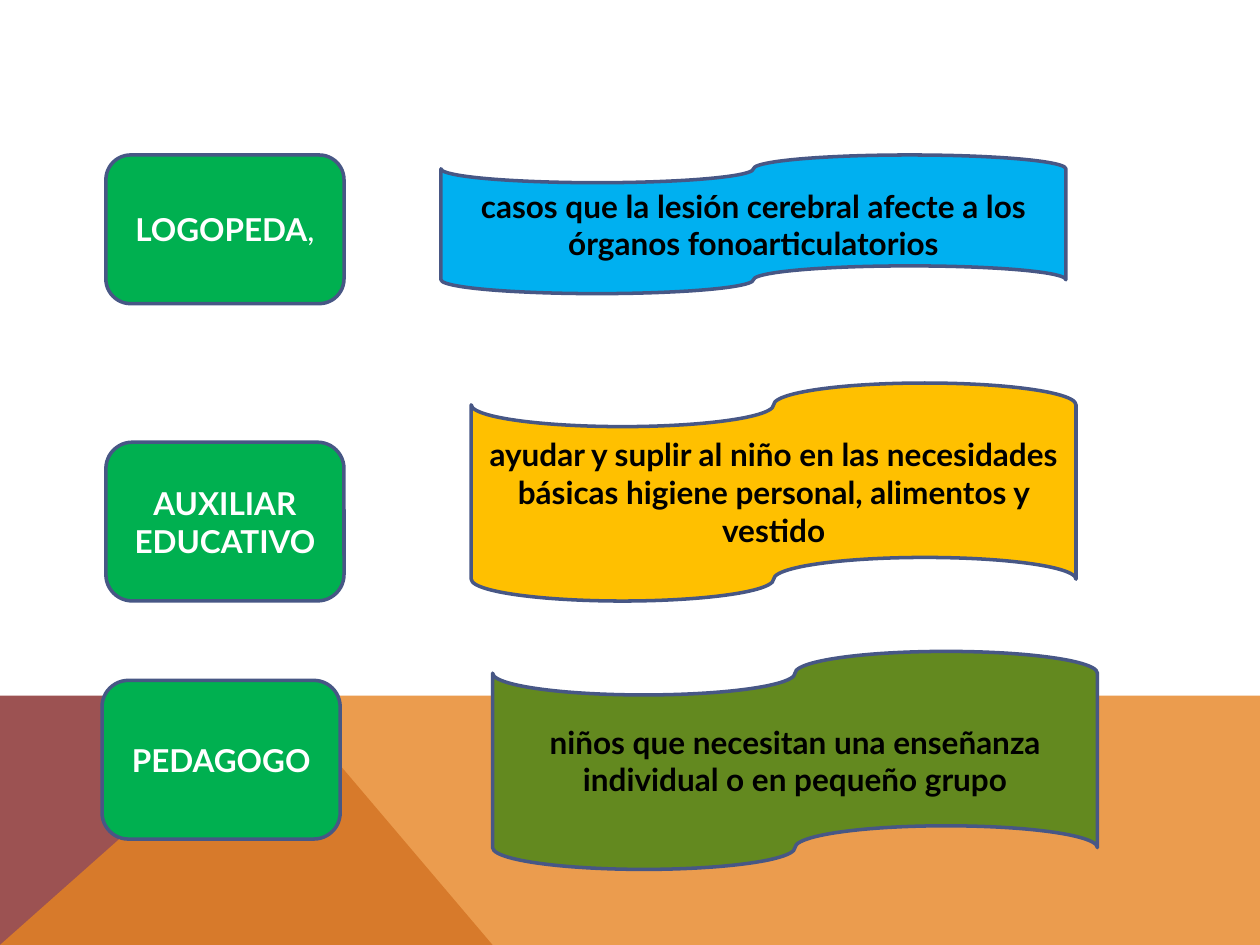
from dataclasses import dataclass

from lxml.etree import SubElement
from pptx import Presentation
from pptx.dml.color import RGBColor
from pptx.enum.shapes import MSO_SHAPE
from pptx.enum.text import MSO_ANCHOR, PP_ALIGN
from pptx.oxml.ns import qn
from pptx.util import Inches, Pt

WIDTH, HEIGHT = Inches(10), Inches(7.5)
FONT = "Lato"
COLORS = {
    "maroon": "9C5252",
    "orange": "E68422",
    "green": "00B050",
    "blue": "00B0F0",
    "amber": "FFC000",
    "olive": "63891F",
    "outline": "475785",
    "white": "FFFFFF",
    "black": "000000",
}
ROLE_WIDTH = 18.9


# All lengths are percentages of the slide's width or height.
@dataclass(frozen=True)
class Box:
    left: float
    top: float
    width: float
    height: float


@dataclass(frozen=True)
class Card:
    box: Box
    text: str
    fill: str
    plain_tail: str = ""


ROLES = [
    Card(Box(8.4, 16.4, ROLE_WIDTH, 15.73), "LOGOPEDA", "green", ","),
    Card(Box(8.4, 46.8, ROLE_WIDTH, 16.8), "AUXILIAR EDUCATIVO", "green"),
    Card(Box(8.1, 72, ROLE_WIDTH, 16.8), "PEDAGOGO", "green"),
]
TASKS = [
    Card(Box(35, 16.4, 49.6, 14.67),
         "casos que la lesión cerebral afecte a los órganos fonoarticulatorios", "blue"),
    Card(Box(37.4, 40.53, 48, 23.07),
         "ayudar y suplir al niño en las necesidades básicas higiene personal, "
         "alimentos y vestido", "amber"),
    Card(Box(39.1, 68.93, 48, 23.07),
         "niños que necesitan una enseñanza individual o en pequeño grupo", "olive"),
]


def rgb(name: str) -> RGBColor:
    return RGBColor.from_string(COLORS[name])


def x(share: float) -> int:
    return round(WIDTH * share / 100)


def y(share: float) -> int:
    return round(HEIGHT * share / 100)


def add_band(shapes, points: list[tuple[float, float]], color: str, opacity: int = 100) -> None:
    corners = [(x(px), y(py)) for px, py in points]
    builder = shapes.build_freeform(*corners[0], scale=1.0)
    builder.add_line_segments(corners[1:], close=True)
    sp = builder.convert_to_shape()
    sp.shadow.inherit = False
    sp.fill.solid()
    sp.fill.fore_color.rgb = rgb(color)
    sp.line.fill.background()
    if opacity < 100:
        fill_color = sp.fill._xPr.find(qn("a:solidFill"))[0]
        SubElement(fill_color, qn("a:alpha"), val=str(opacity * 1000))


def add_card(shapes, card: Card, preset: MSO_SHAPE, text_color: str) -> None:
    box = card.box
    sp = shapes.add_shape(preset, x(box.left), y(box.top), x(box.width), y(box.height))
    sp.shadow.inherit = False
    sp.fill.solid()
    sp.fill.fore_color.rgb = rgb(card.fill)
    sp.line.color.rgb = rgb("outline")
    sp.line.width = Pt(2)
    tf = sp.text_frame
    tf.word_wrap = True
    tf.vertical_anchor = MSO_ANCHOR.MIDDLE
    p = tf.paragraphs[0]
    p.alignment = PP_ALIGN.CENTER
    p.text = card.text
    if card.plain_tail:
        p.add_run().text = card.plain_tail
    for i, r in enumerate(p.runs):
        r.font.name = FONT
        r.font.size = Pt(18)
        r.font.bold = i == 0
        r.font.color.rgb = rgb(text_color)


def main() -> None:
    prs = Presentation()
    prs.slide_width, prs.slide_height = WIDTH, HEIGHT
    shapes = prs.slides.add_slide(prs.slide_layouts[6]).shapes

    add_band(shapes, [(0, 100), (0, 73.6), (22.3, 73.6), (39.1, 100)], "maroon")
    add_band(shapes, [(0, 100), (22.3, 73.6), (100, 73.6), (100, 100)], "orange", 80)
    for role in ROLES:
        add_card(shapes, role, MSO_SHAPE.ROUNDED_RECTANGLE, "white")
    for task in TASKS:
        add_card(shapes, task, MSO_SHAPE.FLOWCHART_PUNCHED_TAPE, "black")

    prs.save("out.pptx")


if __name__ == "__main__":
    main()
